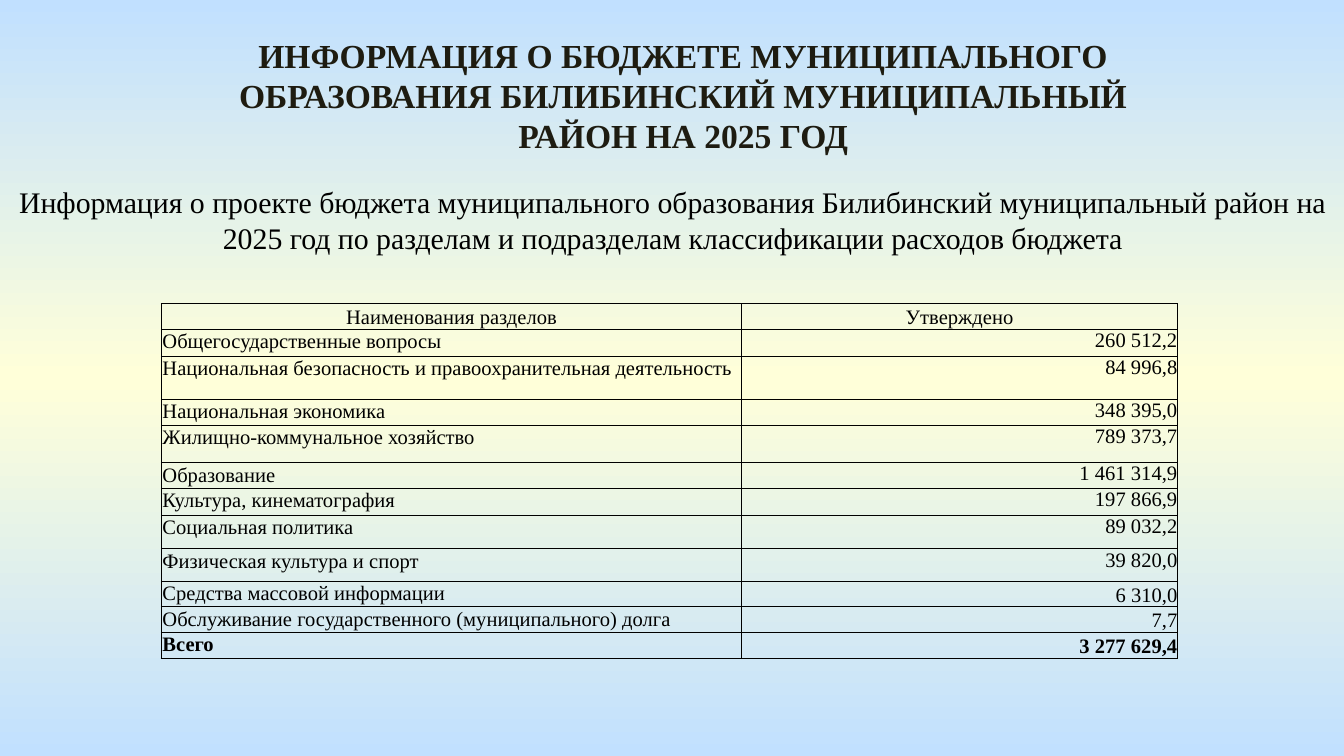
from copy import deepcopy

from lxml import etree
from pptx import Presentation
from pptx.dml.color import RGBColor
from pptx.enum.text import MSO_ANCHOR, PP_ALIGN
from pptx.oxml.ns import qn
from pptx.util import Cm, Pt

LEFT, CENTER, RIGHT = PP_ALIGN.LEFT, PP_ALIGN.CENTER, PP_ALIGN.RIGHT
TOP, MIDDLE, BOTTOM = MSO_ANCHOR.TOP, MSO_ANCHOR.MIDDLE, MSO_ANCHOR.BOTTOM
FONT = "Times New Roman"
BLACK = "000000"
BORDER_WIDTH = Pt(0.5)


def write(frame, text, size=11, color=BLACK, bold=False, align=LEFT):
    frame.word_wrap = True
    paragraph = frame.paragraphs[0]
    paragraph.alignment = align
    run = paragraph.add_run()
    run.text = text
    run.font.name = FONT
    run.font.size = Pt(size)
    run.font.bold = bold
    run.font.color.rgb = RGBColor.from_string(color)


def outline(cell):
    """Draw a thin black border on all four sides of a table cell."""
    properties = cell._tc.get_or_add_tcPr()
    for side in ("lnL", "lnR", "lnT", "lnB"):
        line = etree.SubElement(properties, qn(f"a:{side}"), w=str(BORDER_WIDTH))
        fill = etree.SubElement(line, qn("a:solidFill"))
        etree.SubElement(fill, qn("a:srgbClr"), val=BLACK)


presentation = Presentation()
presentation.slide_width = Cm(25.4)
presentation.slide_height = Cm(14.29)
slide = presentation.slides.add_slide(presentation.slide_layouts[6])

# Background: blue, yellow in the middle, blue again
background = slide.background.fill
background.gradient()
background.gradient_angle = 270
first_stop = slide.element.xpath(".//a:gsLst/a:gs")[0]
first_stop.addnext(deepcopy(first_stop))
gradient = [(0, "C1E0FF"), (0.5, "FFFFD9"), (1, "C1E0FF")]
for stop, (position, color) in zip(background.gradient_stops, gradient):
    stop.position = position
    stop.color.rgb = RGBColor.from_string(color)

# Headings
title = slide.shapes.add_textbox(Cm(3.1), Cm(0.53), Cm(19.63), Cm(2.57))
write(title.text_frame,
      "ИНФОРМАЦИЯ О БЮДЖЕТЕ МУНИЦИПАЛЬНОГО ОБРАЗОВАНИЯ БИЛИБИНСКИЙ "
      "МУНИЦИПАЛЬНЫЙ РАЙОН НА 2025 ГОД",
      size=18, color="1E1C11", bold=True, align=CENTER)

subtitle = slide.shapes.add_textbox(Cm(0.02), Cm(3.35), Cm(25.4), Cm(1.62))
write(subtitle.text_frame,
      "Информация о проекте бюджета муниципального образования Билибинский "
      "муниципальный район на 2025 год по разделам и подразделам "
      "классификации расходов бюджета",
      size=16, align=CENTER)

# Budget table: section, approved amount, row height in cm, amount anchor
budget = [
    ("Наименования разделов", "Утверждено", 0.42, BOTTOM),
    ("Общегосударственные вопросы", "260 512,2", 0.51, TOP),
    ("Национальная безопасность и правоохранительная деятельность",
     "84 996,8", 0.81, TOP),
    ("Национальная экономика", "348 395,0", 0.48, TOP),
    ("Жилищно-коммунальное хозяйство", "789 373,7", 0.71, TOP),
    ("Образование", "1 461 314,9", 0.48, TOP),
    ("Культура, кинематография", "197 866,9", 0.51, TOP),
    ("Социальная политика", "89 032,2", 0.63, TOP),
    ("Физическая культура и спорт", "39 820,0", 0.61, TOP),
    ("Средства массовой информации", "6 310,0", 0.48, BOTTOM),
    ("Обслуживание государственного (муниципального) долга", "7,7", 0.48, BOTTOM),
    ("Всего", "3 277 629,4", 0.48, BOTTOM),
]
column_widths = [Cm(10.97), Cm(8.23)]
table_height = Cm(sum(height for _, _, height, _ in budget))
table = slide.shapes.add_table(len(budget), 2, Cm(3.05), Cm(5.74),
                               sum(column_widths), table_height).table
table.first_row = table.horz_banding = False
for column, width in zip(table.columns, column_widths):
    column.width = width

for index, (section, amount, height, amount_anchor) in enumerate(budget):
    is_header = index == 0
    is_total = index == len(budget) - 1
    table.rows[index].height = Cm(height)
    section_format = (section, CENTER if is_header else LEFT,
                      MIDDLE if is_header else TOP, 0.02)
    amount_format = (amount, CENTER if is_header else RIGHT,
                     amount_anchor, 0.02 if is_header else 0)
    for column, (text, align, anchor, inset) in enumerate((section_format, amount_format)):
        cell = table.cell(index, column)
        cell.margin_left = cell.margin_right = cell.margin_top = Cm(inset)
        cell.margin_bottom = 0
        cell.vertical_anchor = anchor
        outline(cell)
        cell.fill.background()
        write(cell.text_frame, text, bold=is_total, align=align)

presentation.save("out.pptx")
